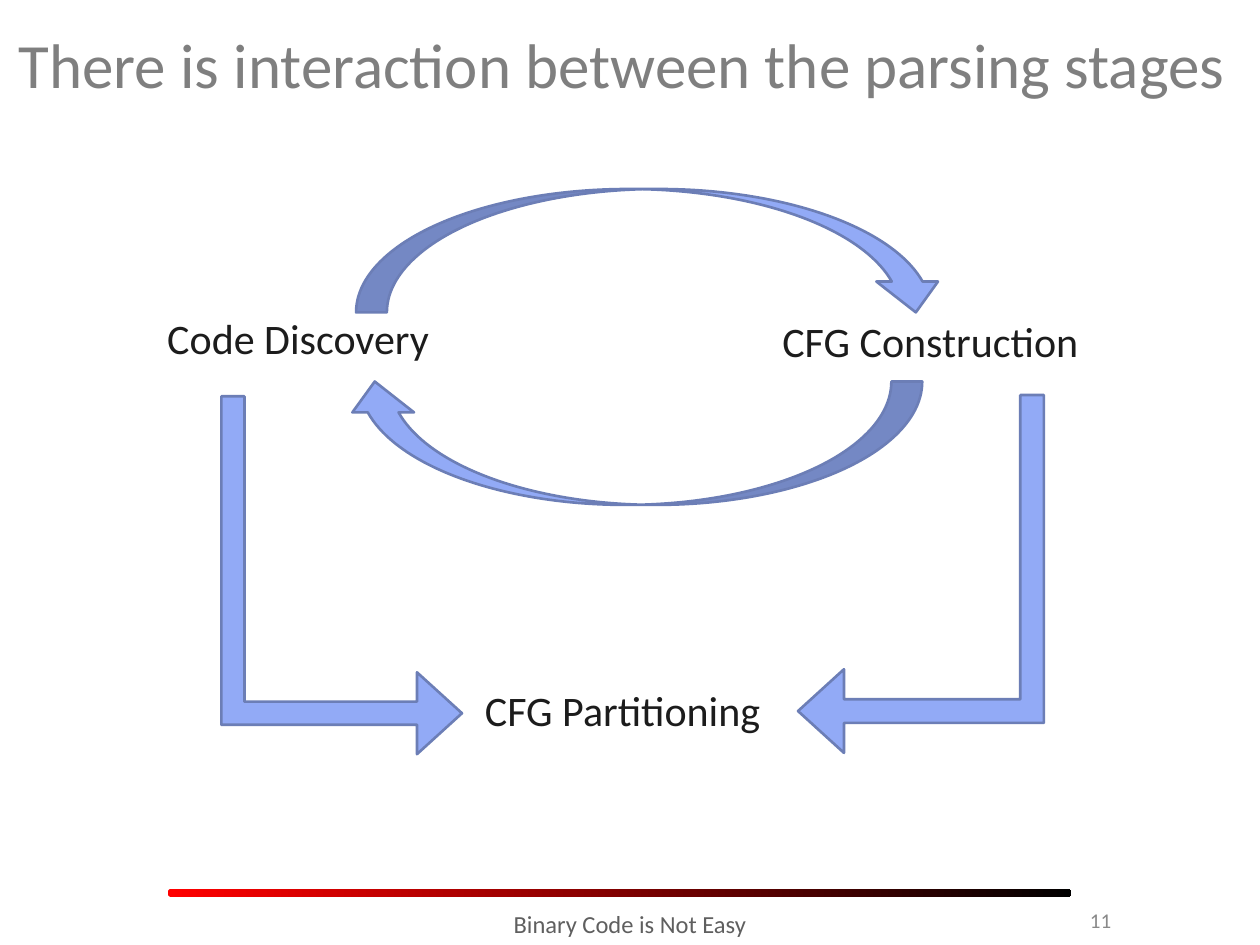
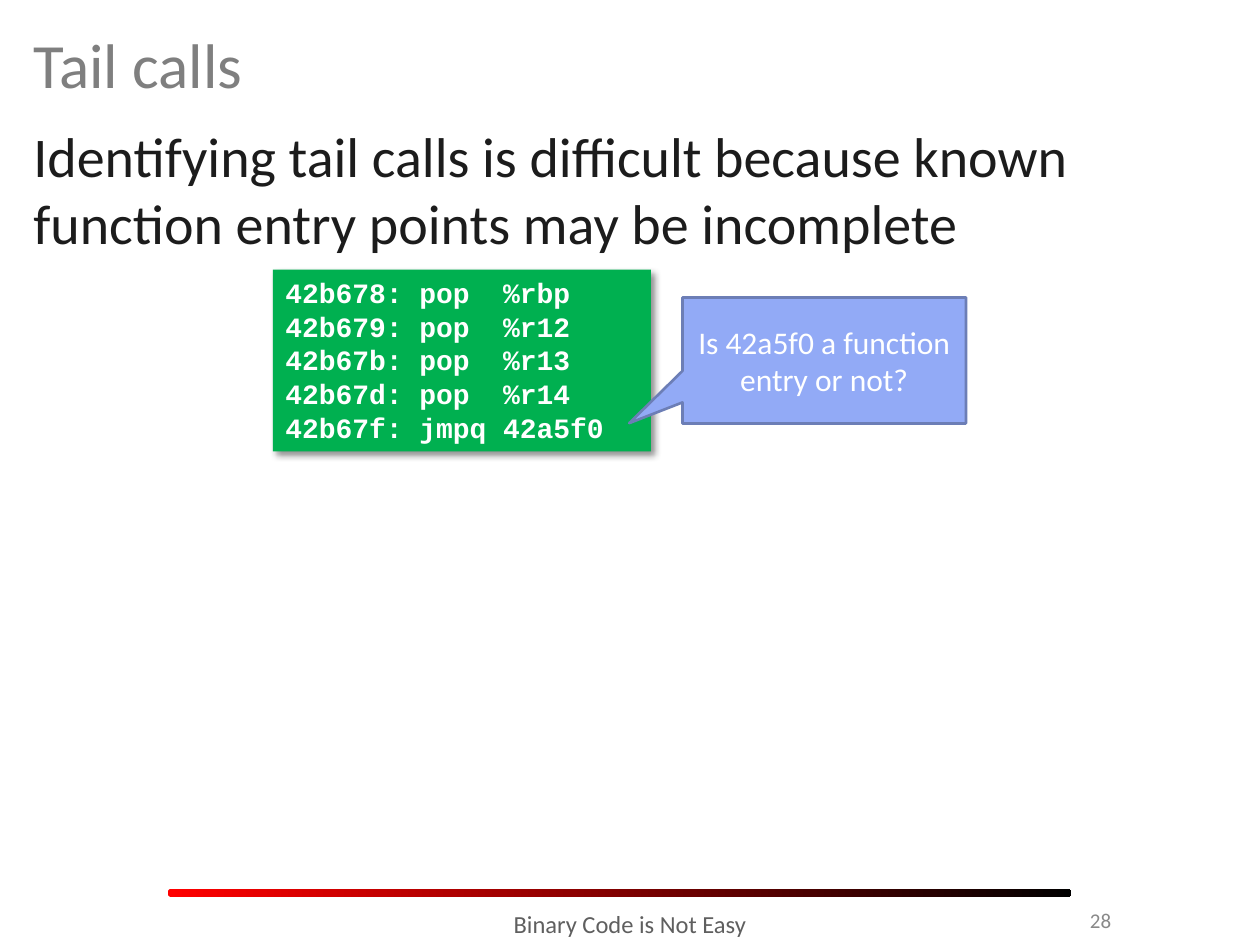
import pptx
import pptx.dml.color
import pptx.enum.shapes
import pptx.enum.text
import pptx.oxml
import pptx.oxml.ns
import pptx.util
from lxml import etree

Pt = pptx.util.Pt
RGBColor = pptx.dml.color.RGBColor
SHAPE = pptx.enum.shapes.MSO_SHAPE
ALIGN = pptx.enum.text.PP_ALIGN
ANCHOR = pptx.enum.text.MSO_ANCHOR

TITLE_GRAY = RGBColor(0x7F, 0x7F, 0x7F)
FOOTER_GRAY = RGBColor(0x5F, 0x5F, 0x5F)
NUMBER_GRAY = RGBColor(0x89, 0x89, 0x89)
INK = RGBColor(0x1C, 0x1C, 0x1C)
WHITE = RGBColor(0xFF, 0xFF, 0xFF)
BLUE = RGBColor(0x92, 0xAA, 0xF6)
BLUE_EDGE = RGBColor(0x6C, 0x7E, 0xB6)
GREEN = RGBColor(0x00, 0xB0, 0x50)
RED = RGBColor(0xFF, 0x00, 0x00)
BLACK = RGBColor(0x00, 0x00, 0x00)

BODY_FONT = "Calibri"
CODE_FONT = "Courier New"
FOOTER = "Binary Code is Not Easy"

CODE_SHADOW = (
    f'<a:effectLst {pptx.oxml.ns.nsdecls("a")}>'
    '<a:outerShdw blurRad="50800" dist="38100" dir="2700000" algn="tl" rotWithShape="0">'
    '<a:srgbClr val="000000"><a:alpha val="43000"/></a:srgbClr>'
    '</a:outerShdw></a:effectLst>'
)


class Deck:
    def __init__(self):
        self.presentation = pptx.Presentation()
        self.presentation.slide_width = Pt(720)
        self.presentation.slide_height = Pt(540)
        self.slide = None

    def new_slide(self, title, number, title_left):
        """Start a slide with its title, gradient rule, footer and number."""
        self.slide = self.presentation.slides.add_slide(self.presentation.slide_layouts[6])
        self.footer_rule()
        self.label(title, (title_left, 6, 716 - title_left, 60), 36, TITLE_GRAY,
                   anchor=ANCHOR.MIDDLE)
        self.label(FOOTER, (174, 516, 372, 29), 14, FOOTER_GRAY, ALIGN.CENTER)
        self.label(str(number), (546, 511, 96, 29), 12, NUMBER_GRAY, ALIGN.RIGHT,
                   ANCHOR.MIDDLE)

    def footer_rule(self):
        rule = self.shape(SHAPE.ROUNDED_RECTANGLE, (96, 508, 516, 4.5), [0.333])
        rule.line.fill.background()
        rule.fill.gradient()
        rule.fill.gradient_angle = 0
        for stop, color in zip(rule.fill.gradient_stops, (RED, BLACK)):
            stop.color.rgb = color

    def set_text(self, frame, text, size, color, align=ALIGN.LEFT, anchor=ANCHOR.TOP,
                 font=BODY_FONT, bold=False):
        frame.word_wrap = True
        frame.vertical_anchor = anchor
        frame.text = text
        for paragraph in frame.paragraphs:
            paragraph.alignment = align
            paragraph.font.name = font
            paragraph.font.size = Pt(size)
            paragraph.font.bold = bold
            paragraph.font.color.rgb = color

    def label(self, text, box, size, color, align=ALIGN.LEFT, anchor=ANCHOR.TOP):
        holder = self.slide.shapes.add_textbox(*map(Pt, box))
        self.set_text(holder.text_frame, text, size, color, align, anchor)

    def bullet(self, text, box, size):
        holder = self.slide.shapes.add_textbox(*map(Pt, box))
        properties = holder.text_frame.paragraphs[0]._p.get_or_add_pPr()
        properties.set("marL", str(Pt(27)))
        properties.set("indent", str(-Pt(27)))
        mark = etree.SubElement(properties, pptx.oxml.ns.qn("a:buChar"))
        mark.set("char", "o")
        self.set_text(holder.text_frame, text, size, INK)

    def shape(self, kind, box, adjustments=(), fill=BLUE, edge=BLUE_EDGE, rotation=0):
        shape = self.slide.shapes.add_shape(kind, *map(Pt, box))
        shape.shadow.inherit = False
        shape.rotation = rotation
        for index, value in enumerate(adjustments):
            shape.adjustments[index] = value
        shape.fill.solid()
        shape.fill.fore_color.rgb = fill
        shape.line.color.rgb = edge
        shape.line.width = Pt(1.5)
        return shape

    def elbow_arrow(self, box, mirrored=False):
        """Arrow that runs down and then right, or left when mirrored."""
        arrow = self.shape(SHAPE.BENT_UP_ARROW, box, (0.096, 0.17, 0.187), rotation=90)
        if mirrored:
            arrow.element.spPr.xfrm.set("flipV", "1")

    def code_block(self, code, box):
        block = self.shape(SHAPE.RECTANGLE, box, fill=GREEN)
        block.line.fill.background()
        properties = block.element.spPr
        properties.remove(properties.find(pptx.oxml.ns.qn("a:effectLst")))
        properties.append(pptx.oxml.parse_xml(CODE_SHADOW))
        self.set_text(block.text_frame, code, 16, WHITE, font=CODE_FONT, bold=True)

    def callout(self, text, box, tip):
        bubble = self.shape(SHAPE.RECTANGULAR_CALLOUT, box, tip)
        self.set_text(bubble.text_frame, text, 18, WHITE, ALIGN.CENTER, ANCHOR.MIDDLE)


def parsing_stages(deck):
    deck.new_slide("There is interaction between the parsing stages", 11, title_left=3.6)
    stages = {
        "Code Discovery": (88.5, 175, 211, 47),
        "CFG Construction": (440, 177, 232, 45),
        "CFG Partitioning": (270, 387.5, 253, 62),
    }
    for stage, box in stages.items():
        deck.label(stage, box, 24, INK)
    deck.shape(SHAPE.CURVED_DOWN_ARROW, (203.5, 108, 337.5, 70.5))
    deck.shape(SHAPE.CURVED_DOWN_ARROW, (196.5, 218, 330.5, 70.5), rotation=180)
    deck.elbow_arrow((93, 260, 204.5, 137.5))
    deck.elbow_arrow((424, 257.75, 204.5, 140.5), mirrored=True)


def tail_calls(deck):
    deck.new_slide("Tail calls", 28, title_left=12)
    deck.bullet("Identifying tail calls is difficult because known function entry points "
                "may be incomplete", (12, 66, 690, 84), 32)
    deck.code_block("42b678: pop  %rbp\n"
                    "42b679: pop  %r12\n"
                    "42b67b: pop  %r13\n"
                    "42b67d: pop  %r14\n"
                    "42b67f: jmpq 42a5f0", (156, 154, 216, 104))
    deck.callout("Is 42a5f0 a function entry or not?", (390, 170, 162, 72), (-0.688, 0.498))


def main():
    deck = Deck()
    parsing_stages(deck)
    tail_calls(deck)
    deck.presentation.save("out.pptx")


if __name__ == "__main__":
    main()
